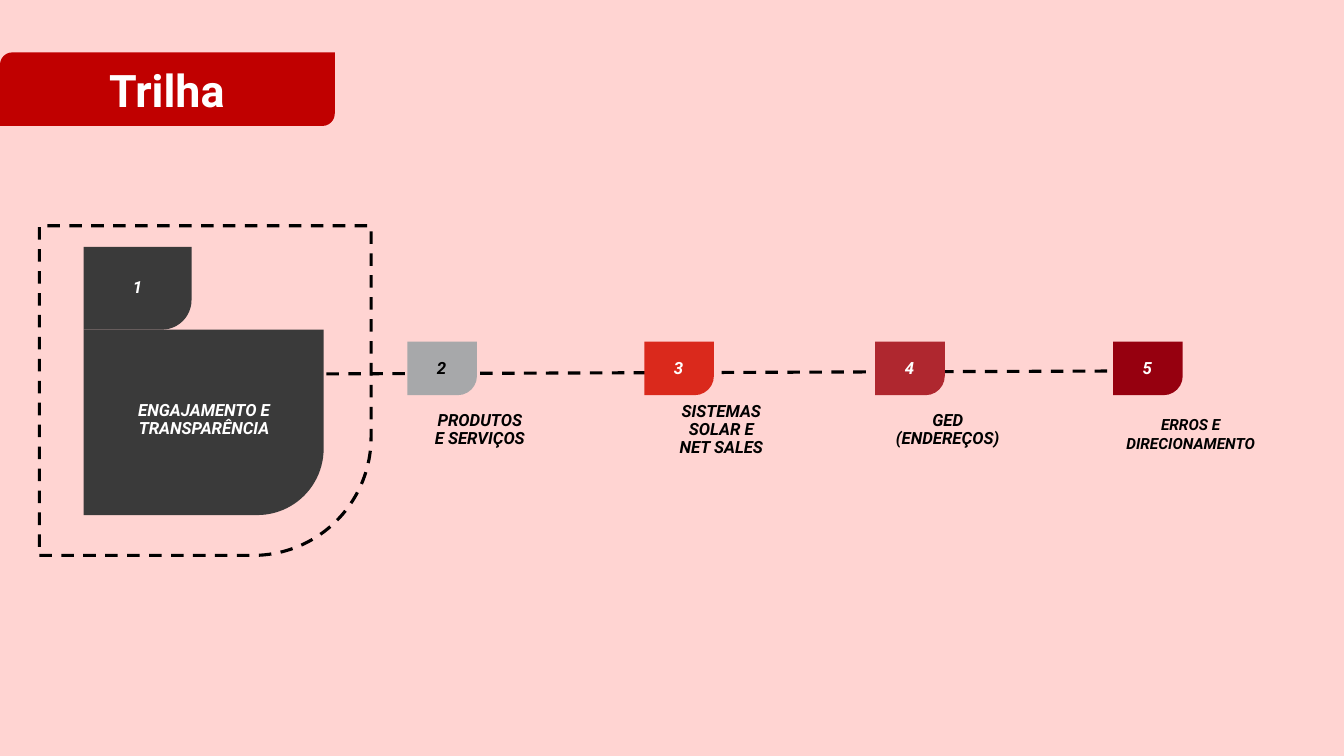
"""Build the "Trilha" slide: a dashed trail linking five numbered stages."""
from lxml import etree
from pptx import Presentation
from pptx.dml.color import RGBColor
from pptx.enum.dml import MSO_LINE
from pptx.enum.shapes import MSO_CONNECTOR, MSO_SHAPE
from pptx.enum.text import MSO_ANCHOR, PP_ALIGN
from pptx.oxml.ns import qn
from pptx.util import Inches, Pt

ONE_ROUND = MSO_SHAPE.ROUND_1_RECTANGLE
DIAGONAL_ROUND = MSO_SHAPE.ROUND_2_DIAG_RECTANGLE
STRAIGHT = MSO_CONNECTOR.STRAIGHT
DASH = MSO_LINE.DASH
MIDDLE = MSO_ANCHOR.MIDDLE
CENTER = PP_ALIGN.CENTER

PINK = RGBColor(0xFF, 0xD4, 0xD2)
BLACK = RGBColor(0x00, 0x00, 0x00)
WHITE = RGBColor(0xFF, 0xFF, 0xFF)
CHARCOAL = RGBColor(0x3A, 0x3A, 0x3A)
GRAY = RGBColor(0xA7, 0xA8, 0xAA)
RED = RGBColor(0xDA, 0x29, 0x1C)
CRIMSON = RGBColor(0xAF, 0x27, 0x2F)
MAROON = RGBColor(0x96, 0x00, 0x0F)
TITLE_RED = RGBColor(0xC0, 0x00, 0x00)

deck = Presentation()
deck.slide_width = Inches(13.33)
deck.slide_height = Inches(7.5)
page = deck.slides.add_slide(deck.slide_layouts[6])
page.background.fill.solid()
page.background.fill.fore_color.rgb = PINK


def add_tile(left, top, width, height, color=None):
    """Add a shape rounded at its lower right: filled, or dashed without a colour."""
    tile = page.shapes.add_shape(
        ONE_ROUND, Inches(left), Inches(top), Inches(width), Inches(height))
    tile.shadow.inherit = False
    tile.adjustments[0] = 0.358
    tile.rotation = 180
    tile.element.spPr.find(qn("a:xfrm")).set("flipH", "1")
    if color is None:
        tile.fill.background()
        tile.line.color.rgb = BLACK
        tile.line.width = Pt(2.25)
        tile.line.dash_style = DASH
    else:
        tile.fill.solid()
        tile.fill.fore_color.rgb = color
        tile.line.fill.background()


def add_label(text, left, top, width, height, color, size=12, spacing=0.9,
              italic=True, inset=0.11):
    """Add a centred bold text box."""
    box = page.shapes.add_textbox(
        Inches(left), Inches(top), Inches(width), Inches(height))
    frame = box.text_frame
    frame.word_wrap = True
    frame.vertical_anchor = MIDDLE
    frame.margin_left = frame.margin_right = Inches(inset)
    frame.margin_top = frame.margin_bottom = Inches(min(inset, 0.11))
    frame.text = text
    para = frame.paragraphs[0]
    para.alignment = CENTER
    para.line_spacing = spacing
    for span in para.runs:
        span.font.name = "Roboto"
        span.font.size = Pt(size)
        span.font.bold = True
        span.font.italic = italic
        span.font.color.rgb = color


trail = page.shapes.add_connector(
    STRAIGHT, Inches(3.02), Inches(3.71), Inches(11.28), Inches(3.68))
trail.line.color.rgb = BLACK
trail.line.width = Pt(2.25)
trail.line.dash_style = DASH
etree.SubElement(trail.element.spPr, qn("a:effectLst"))

add_tile(0.83, 3.27, 2.38, 1.84, CHARCOAL)
add_tile(0.83, 2.45, 1.07, 0.82, CHARCOAL)
add_label("ENGAJAMENTO E TRANSPARÊNCIA", 0.96, 3.71, 2.13, 0.92, WHITE)
add_label("1", 0.96, 2.57, 0.81, 0.58, WHITE)

stages = [
    (4.04, GRAY, BLACK, "PRODUTOS\vE SERVIÇOS", (4.08, 3.97, 1.36, 0.6), 12, 0.9),
    (6.39, RED, WHITE, "SISTEMAS SOLAR E\vNET SALES", (6.39, 3.97, 1.53, 0.6), 12, 0.9),
    (8.68, CRIMSON, WHITE, "GED (ENDEREÇOS)", (8.72, 3.97, 1.36, 0.6), 12, 0.9),
    (11.04, MAROON, WHITE, "ERROS E DIRECIONAMENTO", (11.04, 4.06, 1.54, 0.49), 11, 1.0),
]
for number, stage in enumerate(stages, start=2):
    left, fill_color, number_color, caption, place, size, spacing = stage
    add_tile(left, 3.39, 0.69, 0.53, fill_color)
    add_label(caption, *place, BLACK, size, spacing)
    add_label(str(number), left + 0.08, 3.47, 0.52, 0.38, number_color)

add_tile(0.39, 2.24, 3.29, 3.27)

banner = page.shapes.add_shape(
    DIAGONAL_ROUND, Inches(0), Inches(0.52), Inches(3.32), Inches(0.73))
banner.shadow.inherit = False
banner.fill.solid()
banner.fill.fore_color.rgb = TITLE_RED
banner.line.fill.background()
add_label("Trilha", 0.18, 0.57, 2.95, 0.64, WHITE, 32, 1.0, italic=False, inset=0.05)

deck.save("out.pptx")
